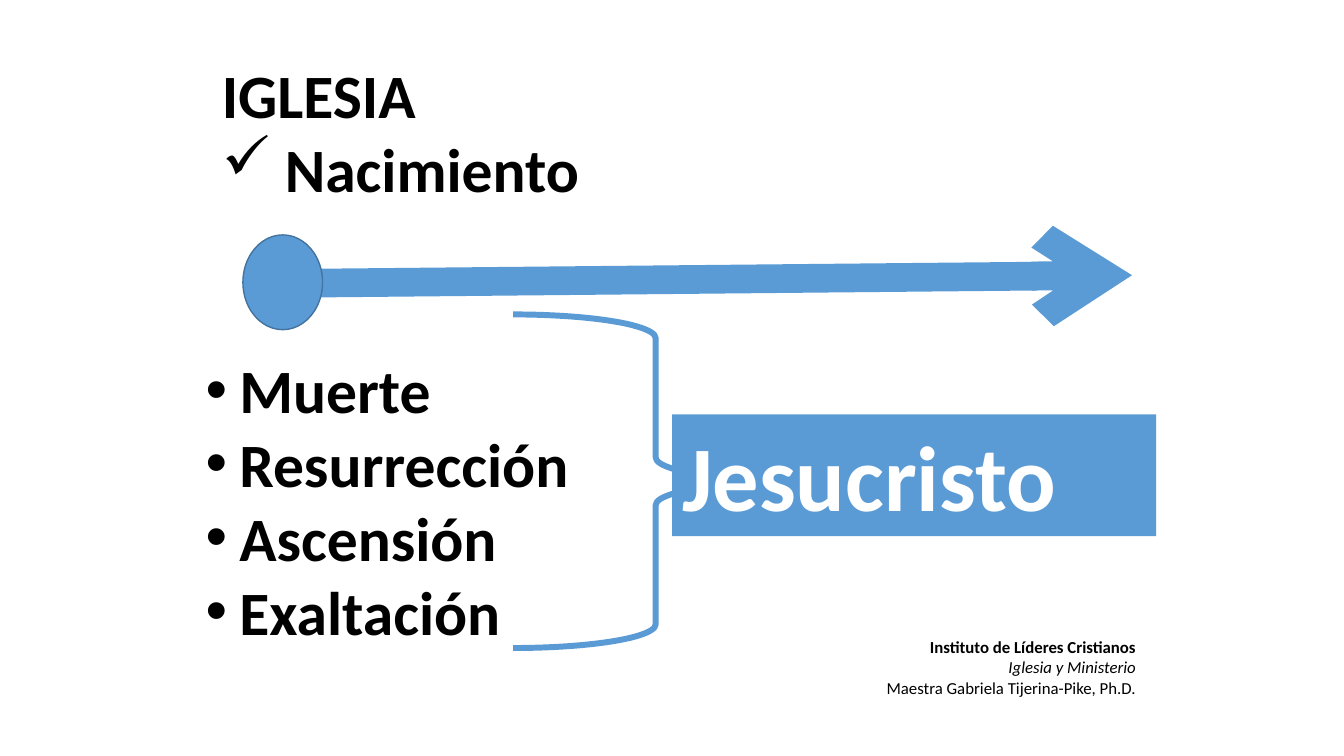
import pptx
import pptx.util
import pptx.dml.color
import pptx.enum.shapes
import pptx.enum.text
import pptx.oxml.ns
from dataclasses import dataclass
from lxml import etree

Pt = pptx.util.Pt
SHAPE = pptx.enum.shapes.MSO_SHAPE
ALIGN = pptx.enum.text.PP_ALIGN


@dataclass(frozen=True)
class Theme:
    font: str = "Calibri"
    ink: str = "000000"
    paper: str = "FFFFFF"
    accent: str = "5B9BD5"
    outline: str = "43739E"
    heading_size: int = 44
    name_size: int = 66
    credit_size: int = 12


THEME = Theme()

HEADING = ["IGLESIA", "Nacimiento"]
HEADING_BULLETS = [None, ("✓", 45)]
EVENTS = ["Muerte", "Resurrección", "Ascensión", "Exaltación"]
EVENT_BULLETS = [("•", 24)] * len(EVENTS)
NAME = "Jesucristo"
CREDIT = ["Instituto de Líderes Cristianos", "Iglesia y Ministerio",
          "Maestra Gabriela Tijerina-Pike, Ph.D."]

HEADING_BOX = (151.2, 37.4, 465.1, 113.8)
EVENTS_BOX = (139.7, 247.7, 329, 220.3)
NAME_BOX = (480.2, 295.9, 345.6, 87.1)
CREDIT_BOX = (547.9, 451.4, 270.7, 51.1)
ORIGIN_BOX = (173.5, 167.8, 56.9, 67.7)
BRACE_BOX = (366.5, 224.6, 203.8, 238.3)
TIMELINE = (218.9, 202.3, 808.6, 196.6)


def color(value):
    return pptx.dml.color.RGBColor.from_string(value)


def place(part, box):
    part.left, part.top, part.width, part.height = map(Pt, box)


def set_bullet(paragraph, bullet):
    properties = paragraph._p.get_or_add_pPr()
    mark, indent = bullet or (None, 0)
    properties.set("marL", str(Pt(indent)))
    properties.set("indent", str(-Pt(indent)))
    if mark:
        etree.SubElement(properties, pptx.oxml.ns.qn("a:buChar"), char=mark)
    else:
        etree.SubElement(properties, pptx.oxml.ns.qn("a:buNone"))


def write(part, lines, size, ink=THEME.ink, bullets=None, align=ALIGN.LEFT):
    frame = part.text_frame
    frame.text = "\n".join(lines)
    frame.word_wrap = True
    frame.auto_size = pptx.enum.text.MSO_AUTO_SIZE.NONE
    frame.vertical_anchor = pptx.enum.text.MSO_ANCHOR.TOP
    for paragraph, bullet in zip(frame.paragraphs, bullets or [None] * len(lines)):
        set_bullet(paragraph, bullet)
        paragraph.alignment = align
        paragraph.space_before = Pt(0)
        for run in paragraph.runs:
            run.font.name = THEME.font
            run.font.size = Pt(size)
            run.font.bold = True
            run.font.color.rgb = color(ink)


def add_shape(slide, kind, box, fill=None, outline=None, weight=1):
    shape = slide.shapes.add_shape(kind, *map(Pt, box))
    shape.shadow.inherit = False
    for paint, value in ((shape.fill, fill), (shape.line.fill, outline)):
        if value:
            paint.solid()
            paint.fore_color.rgb = color(value)
        else:
            paint.background()
    if outline:
        shape.line.width = Pt(weight)
    return shape


def add_timeline(slide):
    timeline = slide.shapes.add_connector(
        pptx.enum.shapes.MSO_CONNECTOR.STRAIGHT, *map(Pt, TIMELINE))
    timeline.line.color.rgb = color(THEME.accent)
    timeline.line.width = Pt(20.5)
    etree.SubElement(timeline.line._get_or_add_ln(),
                     pptx.oxml.ns.qn("a:tailEnd"), type="arrow")
    etree.SubElement(timeline._element.spPr, pptx.oxml.ns.qn("a:effectLst"))


def main():
    deck = pptx.Presentation()
    deck.slide_width, deck.slide_height = Pt(960), Pt(540)
    slide = deck.slides.add_slide(deck.slide_layouts[1])
    heading, events = slide.placeholders
    place(heading, HEADING_BOX)
    write(heading, HEADING, THEME.heading_size, bullets=HEADING_BULLETS)
    place(events, EVENTS_BOX)
    write(events, EVENTS, THEME.heading_size, bullets=EVENT_BULLETS)

    credit = slide.shapes.add_textbox(*map(Pt, CREDIT_BOX))
    write(credit, CREDIT, THEME.credit_size, align=ALIGN.RIGHT)
    institute, course, teacher = credit.text_frame.paragraphs
    course.runs[0].font.bold = teacher.runs[0].font.bold = False
    course.runs[0].font.italic = True

    add_timeline(slide)
    add_shape(slide, SHAPE.OVAL, ORIGIN_BOX, THEME.accent, THEME.outline)
    add_shape(slide, SHAPE.RIGHT_BRACE, BRACE_BOX, outline=THEME.accent, weight=4.25)
    name = add_shape(slide, SHAPE.RECTANGLE, NAME_BOX, THEME.accent)
    write(name, [NAME], THEME.name_size, THEME.paper)
    deck.save("out.pptx")


if __name__ == "__main__":
    main()
